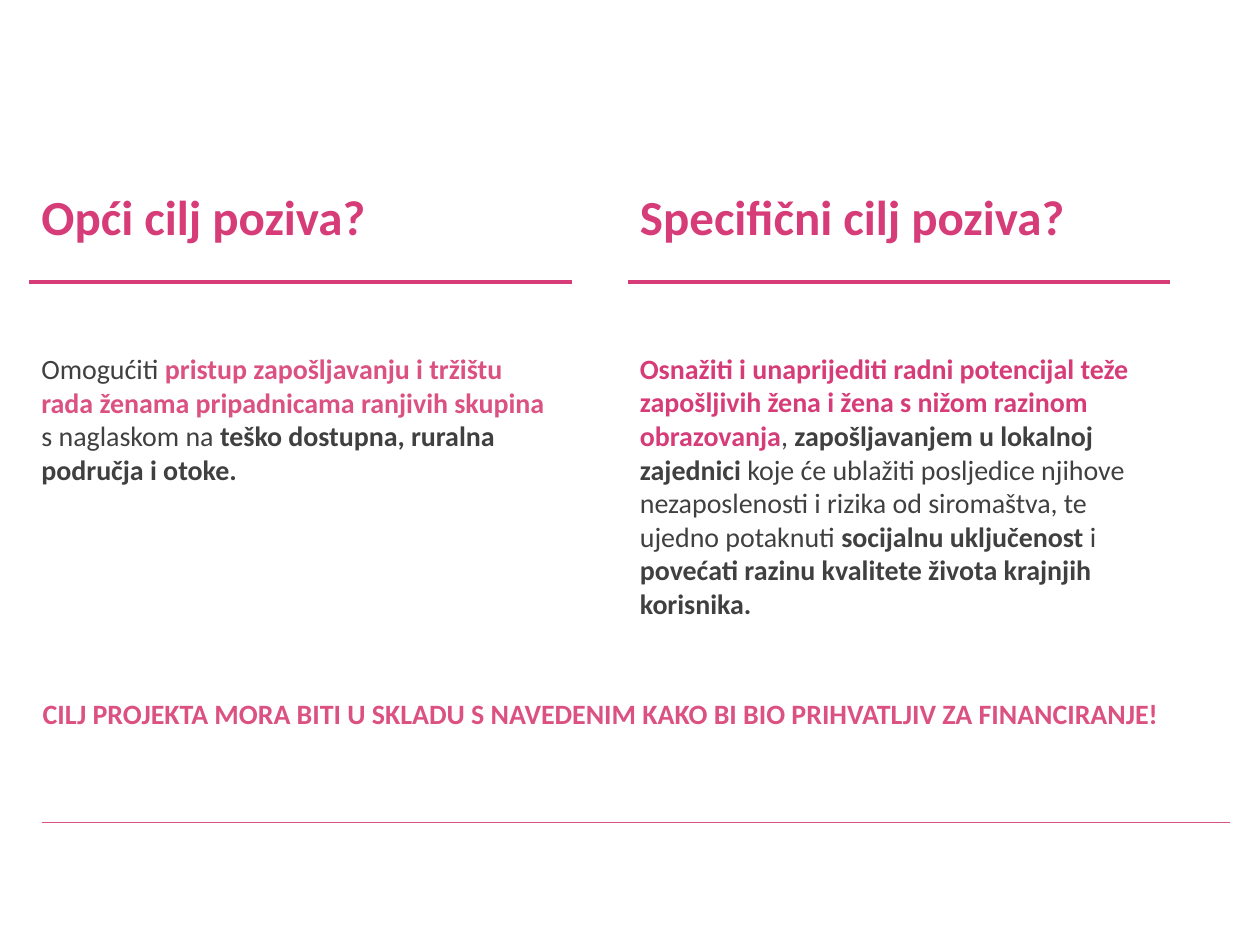
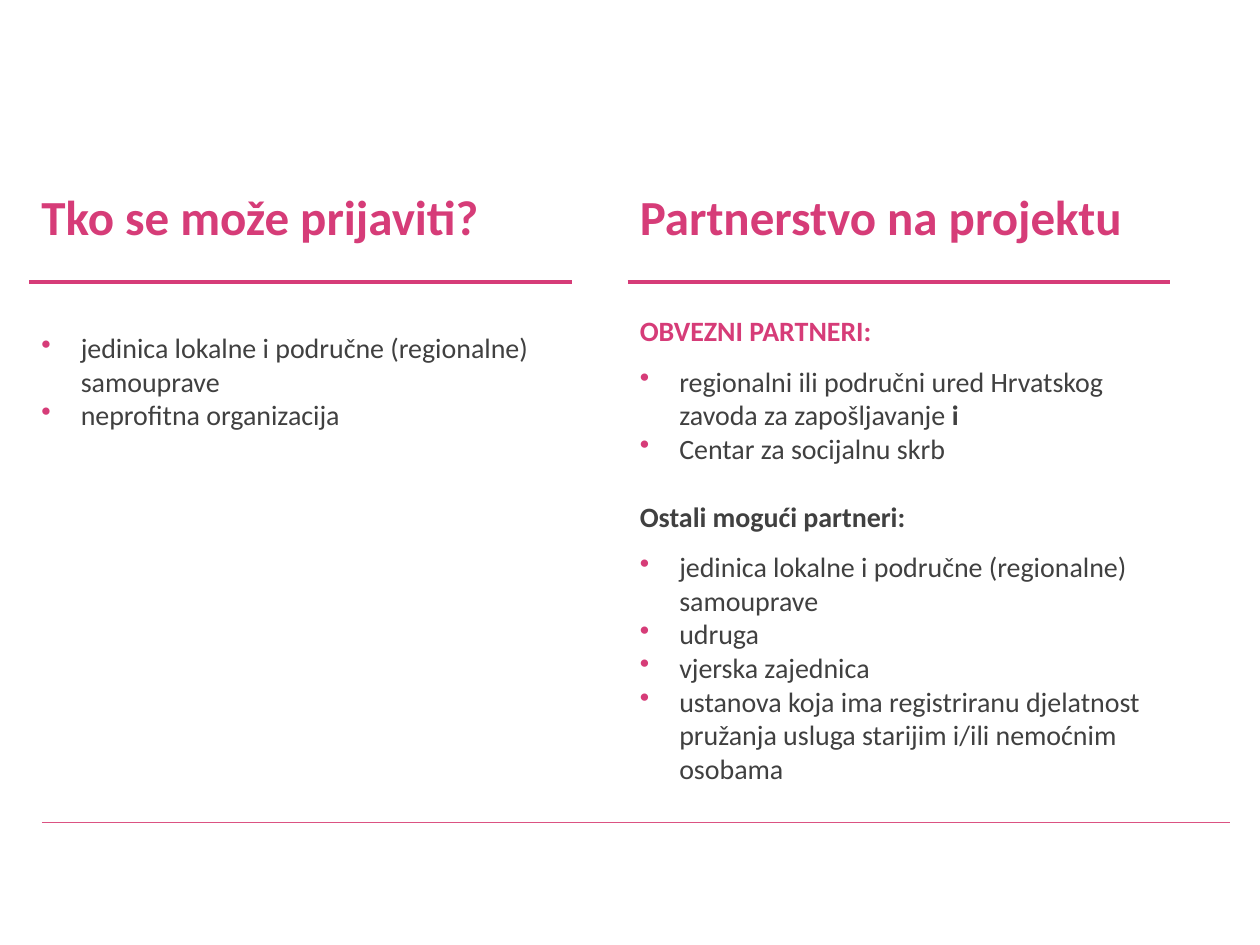
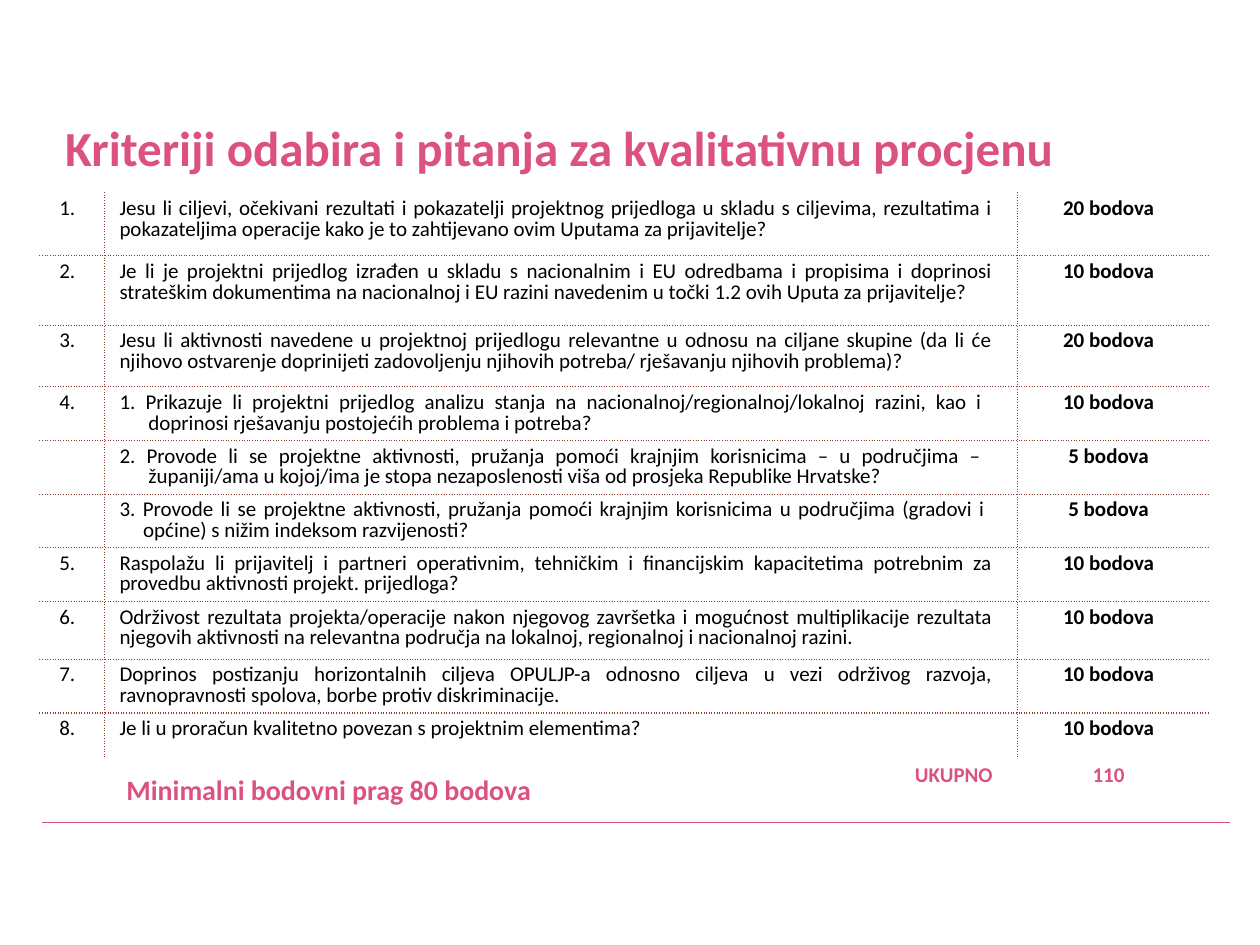
from dataclasses import dataclass

from lxml.etree import SubElement as sub_element
from pptx import Presentation
from pptx.dml.color import RGBColor
from pptx.enum.shapes import MSO_CONNECTOR
from pptx.enum.text import MSO_AUTO_SIZE, PP_ALIGN
from pptx.oxml.ns import qn
from pptx.util import Pt


@dataclass(frozen=True)
class Theme:
    font: str = "Calibri"
    pink: str = "D63C78"
    rose: str = "DB5282"
    grey: str = "404040"
    black: str = "000000"
    white: str = "FFFFFF"
    maroon: str = "953735"
    title_size: float = 28
    body_size: float = 16
    table_size: float = 12
    hang: float = 22.5
    small_gap: float = 9.75
    line_gap: float = 19.5


THEME = Theme()
COLUMN_LEFTS = (16.6, 358.6)
COLUMN_TOP, COLUMN_WIDTH = 103, 310


# Shared drawing helpers
def add_paragraph(frame, runs, size=THEME.body_size, color=THEME.grey, bold=False,
                  align=PP_ALIGN.LEFT, spacing=None, before=0, bullet=False,
                  indent=0, hanging=0):
    """Write runs, each a string or (string, bold[, colour]); "\n" breaks a line."""
    paragraph = frame.paragraphs[0]
    if paragraph.runs:
        paragraph = frame.add_paragraph()
    paragraph.alignment = align
    if spacing:
        paragraph.line_spacing = spacing
    if before:
        paragraph.space_before = Pt(before)
    properties = paragraph._p.get_or_add_pPr()
    if bullet:
        indent = hanging = THEME.hang
        bullet_color = sub_element(properties, qn("a:buClr"))
        sub_element(bullet_color, qn("a:srgbClr"), val=THEME.pink)
        sub_element(properties, qn("a:buChar"), char="•")
    if indent:
        properties.set("marL", str(Pt(indent)))
        properties.set("indent", str(-Pt(hanging)))
    for item in [runs] if isinstance(runs, str) else runs:
        text, run_bold, run_color = (
            (item, bold, color) if isinstance(item, str) else (*item, color)[:3])
        for number, line in enumerate(text.split("\n")):
            if number:
                paragraph.add_line_break()
            run = paragraph.add_run()
            run.text = line
            run.font.name = THEME.font
            run.font.size = Pt(size)
            run.font.bold = run_bold
            run.font.color.rgb = RGBColor.from_string(run_color)


def add_text(slide, left, top, width, height, paragraphs, wrap=True):
    box = slide.shapes.add_textbox(Pt(left), Pt(top), Pt(width), Pt(height))
    frame = box.text_frame
    frame.word_wrap = wrap
    frame.auto_size = MSO_AUTO_SIZE.SHAPE_TO_FIT_TEXT
    for paragraph in paragraphs:
        add_paragraph(frame, **paragraph)


def add_title(slide, left, top, width, text, color):
    title = dict(runs=text, size=THEME.title_size, color=color, bold=True)
    add_text(slide, left, top, width, 41, [title], wrap=False)


def add_rule(slide, left, top, width, color, weight):
    line = slide.shapes.add_connector(
        MSO_CONNECTOR.STRAIGHT, Pt(left), Pt(top), Pt(left + width), Pt(top))
    line.line.color.rgb = RGBColor.from_string(color)
    line.line.width = Pt(weight)
    sub_element(line._element.spPr, qn("a:effectLst"))


def add_base_slide(presentation):
    slide = presentation.slides.add_slide(presentation.slide_layouts[6])
    add_rule(slide, 24, 470, 679, THEME.rose, 1)
    return slide


# Heading, rule and body of one column
def add_column(slide, left, top, width, title, title_width, body, body_offset, body_height):
    add_title(slide, left, top, title_width, title, THEME.pink)
    add_rule(slide, left, top + 58.3, width, THEME.pink, 2.25)
    add_text(slide, left, top + body_offset, width, body_height, body)


def add_column_slide(presentation, columns):
    slide = add_base_slide(presentation)
    for left, column in zip(COLUMN_LEFTS, columns):
        add_column(slide, left, COLUMN_TOP, COLUMN_WIDTH, *column)
    return slide


def bullets(items, before=0):
    return [dict(runs=item, bullet=True, before=0 if number else before)
            for number, item in enumerate(items)]


# Criteria table
def set_borders(cell, row, column, last_row, last_column):
    scored = row < last_row
    dotted = {
        "a:lnL": scored and column > 0,
        "a:lnR": scored and column < last_column,
        "a:lnT": 0 < row < last_row,
        "a:lnB": row < last_row - 1,
    }
    properties = cell._tc.get_or_add_tcPr()
    for tag, is_dotted in dotted.items():
        border = sub_element(properties, qn(tag), w=str(Pt(0.75 if is_dotted else 1)))
        fill = sub_element(border, qn("a:solidFill"))
        sub_element(fill, qn("a:srgbClr"), val=THEME.maroon if is_dotted else THEME.white)
        sub_element(border, qn("a:prstDash"), val="dot" if is_dotted else "solid")


def add_criteria_table(slide, left, top, widths, heights, criteria, total, threshold):
    last_row, last_column = len(criteria), len(widths) - 1
    table = slide.shapes.add_table(
        last_row + 1, len(widths), Pt(left), Pt(top),
        Pt(sum(widths)), Pt(sum(heights))).table
    table.first_row = table.horz_banding = False
    for column, width in zip(table.columns, widths):
        column.width = Pt(width)
    for row, height in zip(table.rows, heights):
        row.height = Pt(height)
    for row in range(last_row + 1):
        for column in range(len(widths)):
            cell = table.cell(row, column)
            cell.margin_left, cell.margin_right = Pt(8.64), Pt(14.4)
            cell.margin_top = cell.margin_bottom = Pt(3.6)
            set_borders(cell, row, column, last_row, last_column)
            cell.fill.background()

    # Scored rows
    style = dict(size=THEME.table_size, color=THEME.black, spacing=0.8)
    for row, (number, question, hanging, points) in enumerate(criteria):
        number_cell, question_cell, points_cell = table.rows[row].cells
        if number:
            add_paragraph(number_cell.text_frame, number, align=PP_ALIGN.CENTER, **style)
        add_paragraph(question_cell.text_frame, question, align=PP_ALIGN.JUSTIFY,
                      indent=hanging, hanging=hanging, **style)
        add_paragraph(points_cell.text_frame, f"{points} bodova", bold=True,
                      align=PP_ALIGN.CENTER, **style)

    # Total row
    style.update(color=THEME.rose, bold=True)
    _, label_cell, total_cell = table.rows[last_row].cells
    add_paragraph(label_cell.text_frame, "UKUPNO", align=PP_ALIGN.RIGHT, **style)
    add_paragraph(label_cell.text_frame, threshold, color=THEME.rose, bold=True,
                  spacing=0.5, indent=4)
    add_paragraph(total_cell.text_frame, total, align=PP_ALIGN.CENTER, **style)


# Slide contents
GENERAL_GOAL = [dict(runs=[
    "Omogućiti ",
    ("pristup zapošljavanju i tržištu rada ženama pripadnicama ranjivih skupina ",
     True, THEME.rose),
    "s naglaskom na ",
    ("teško dostupna, ruralna područja i otoke.", True),
])]
SPECIFIC_GOAL = [dict(runs=[
    ("Osnažiti i unaprijediti radni potencijal teže zapošljivih žena i žena s nižom "
     "razinom obrazovanja", True, THEME.pink),
    ", ",
    ("zapošljavanjem u lokalnoj zajednici", True),
    " koje će ublažiti posljedice njihove nezaposlenosti i rizika od siromaštva, "
    "te ujedno potaknuti ",
    ("socijalnu uključenost ", True),
    "i ",
    ("povećati razinu kvalitete života krajnjih korisnika.", True),
])]
LOCAL_UNIT = "jedinica lokalne i područne (regionalne) samouprave"
APPLICANTS = bullets([LOCAL_UNIT, "neprofitna organizacija"])
PARTNERS = [
    dict(runs="OBVEZNI PARTNERI:", color=THEME.pink, bold=True),
    *bullets([
        ["regionalni ili područni ured Hrvatskog zavoda za zapošljavanje ", ("i", True)],
        "Centar za socijalnu skrb",
    ], before=THEME.small_gap),
    dict(runs="Ostali mogući partneri:", bold=True, before=THEME.line_gap),
    *bullets([
        LOCAL_UNIT,
        "udruga",
        "vjerska zajednica",
        "ustanova koja ima registriranu djelatnost pružanja usluga starijim i/ili "
        "nemoćnim osobama",
    ], before=THEME.small_gap),
]
# Number, question, hanging indent, points
CRITERIA = [
    ("1.", "Jesu li ciljevi, očekivani rezultati i pokazatelji projektnog prijedloga u skladu "
     "s ciljevima, rezultatima i pokazateljima operacije kako je to zahtijevano ovim "
     "Uputama za prijavitelje?", 0, 20),
    ("2.", "Je li je projektni prijedlog izrađen u skladu s nacionalnim i EU odredbama i "
     "propisima i doprinosi strateškim dokumentima na nacionalnoj i EU razini navedenim "
     "u točki 1.2 ovih Uputa za prijavitelje?", 0, 10),
    ("3.", "Jesu li aktivnosti navedene u projektnoj prijedlogu relevantne u odnosu na "
     "ciljane skupine (da li će njihovo ostvarenje doprinijeti zadovoljenju njihovih "
     "potreba/ rješavanju njihovih problema)?", 0, 20),
    ("4.", "1. Prikazuje li projektni prijedlog analizu stanja na "
     "nacionalnoj/regionalnoj/lokalnoj razini, kao i \n"
     "doprinosi rješavanju postojećih problema i potreba?", 16.5, 10),
    ("", "2. Provode li se projektne aktivnosti, pružanja pomoći krajnjim korisnicima – u "
     "područjima – \nžupaniji/ama u kojoj/ima je stopa nezaposlenosti viša od prosjeka "
     "Republike Hrvatske?", 16.5, 5),
    ("", "3. Provode li se projektne aktivnosti, pružanja pomoći krajnjim korisnicima u "
     "područjima (gradovi i \nopćine) s nižim indeksom razvijenosti?", 13.5, 5),
    ("5.", "Raspolažu li prijavitelj i partneri operativnim, tehničkim i financijskim "
     "kapacitetima potrebnim za provedbu aktivnosti projekt. prijedloga?", 0, 10),
    ("6.", "Održivost rezultata projekta/operacije nakon njegovog završetka i mogućnost "
     "multiplikacije rezultata njegovih aktivnosti na relevantna područja na lokalnoj, "
     "regionalnoj i nacionalnoj razini.", 0, 10),
    ("7.", "Doprinos postizanju horizontalnih ciljeva OPULJP-a odnosno ciljeva u vezi "
     "održivog razvoja, ravnopravnosti spolova, borbe protiv diskriminacije.", 0, 10),
    ("8.", "Je li u proračun kvalitetno povezan s projektnim elementima?", 0, 10),
]
ROW_HEIGHTS = (36, 39.6, 35.3, 28.8, 28.8, 28.8, 26.6, 33.1, 28.8, 27, 30.2)


def add_criteria_slide(presentation):
    slide = add_base_slide(presentation)
    add_criteria_table(slide, 23, 110.2, (36.7, 522, 109.4), ROW_HEIGHTS, CRITERIA,
                       "110", "Minimalni bodovni prag 80 bodova")
    add_title(slide, 30.2, 63.4, 588, "Kriteriji odabira i pitanja za kvalitativnu procjenu",
              THEME.rose)


def main():
    presentation = Presentation()
    presentation.slide_width, presentation.slide_height = Pt(720), Pt(540)

    goals = add_column_slide(presentation, [
        ("Opći cilj poziva?", 202.3, GENERAL_GOAL, 94.3, 85),
        ("Specifični cilj poziva?", 260.6, SPECIFIC_GOAL, 94.3, 162.7),
    ])
    add_text(goals, 17.3, 394.6, 683.3, 26.6, [dict(
        runs="CILJ PROJEKTA MORA BITI U SKLADU S NAVEDENIM KAKO BI BIO PRIHVATLJIV "
             "ZA FINANCIRANJE!", color=THEME.rose, bold=True)])

    add_column_slide(presentation, [
        ("Tko se može prijaviti?", 267, APPLICANTS, 82.5, 65),
        ("Partnerstvo na projektu", 293, PARTNERS, 72.7, 278.6),
    ])
    add_criteria_slide(presentation)
    presentation.save("out.pptx")


if __name__ == "__main__":
    main()
